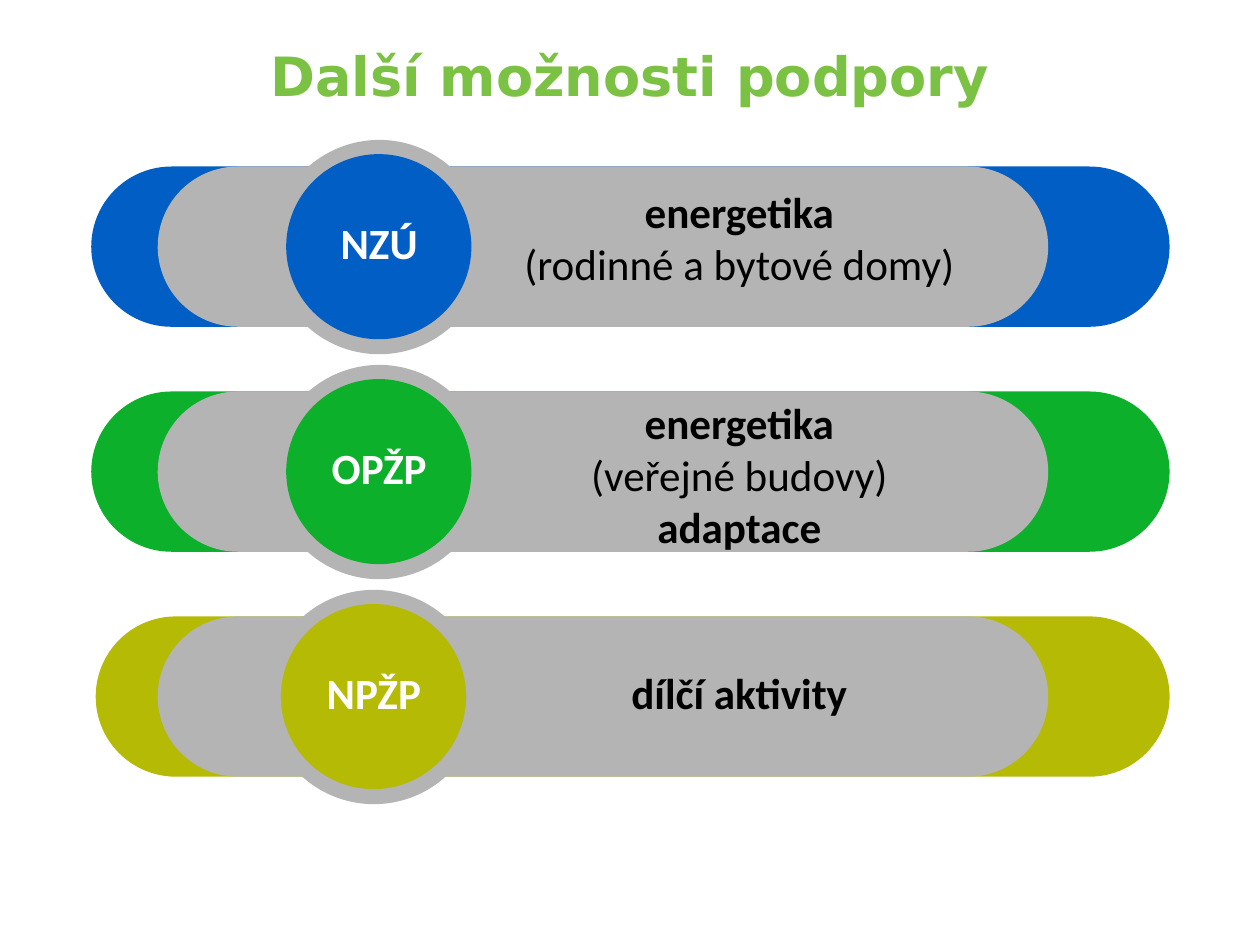
from dataclasses import dataclass

from pptx import Presentation
from pptx import util as u
from pptx.dml.color import RGBColor
from pptx.enum import shapes, text

PX = 9144  # EMU in one px, 100 px to the inch


@dataclass(frozen=True)
class Theme:
    blue: str = "005EC4"
    green: str = "0DB02B"
    olive: str = "B5BA05"
    grey: str = "B4B4B4"
    white: str = "FFFFFF"
    black: str = "000000"
    title: str = "7BC143"
    body_font: str = "Calibri"
    title_font: str = "DejaVu Sans"
    body_size: int = 35
    title_size: int = 44


THEME = Theme()
BAND_LEFT, BAND_RIGHT, BAND_TOP = 103, 1320, 188
BAND_HEIGHT, BAND_PITCH = 181, 254
PANEL_LEFT, PANEL_WIDTH = 178, 1005
RING, DISC = 242, 209
TEXT_LEFT, TEXT_WIDTH, LINE_HEIGHT = 549, 571, 59

# label, colour, shift of the band end, shift of the badge, text offset, lines (text, bold)
PROGRAMMES = [
    ("NZÚ", THEME.blue, 0, 0, 17,
     [("energetika", True), ("(rodinné a bytové domy)", False)]),
    ("OPŽP", THEME.green, 0, 0, 1,
     [("energetika", True), ("(veřejné budovy)", False), ("adaptace", True)]),
    ("NPŽP", THEME.olive, 5, -6, 52,
     [("dílčí aktivity", True)]),
]


def scaled(box):
    return [u.Emu(length * PX) for length in box]


def add_solid(slide, kind, box, colour):
    shape = slide.shapes.add_shape(kind, *scaled(box))
    shape.shadow.inherit = False
    shape.fill.solid()
    shape.fill.fore_color.rgb = RGBColor.from_string(colour)
    shape.line.fill.background()
    return shape


def add_pill(slide, box, colour):
    pill = add_solid(slide, shapes.MSO_SHAPE.ROUNDED_RECTANGLE, box, colour)
    pill.adjustments[0] = 0.5


def add_text(slide, box, lines, colour, name=THEME.body_font, size=THEME.body_size):
    frame = slide.shapes.add_textbox(*scaled(box)).text_frame
    frame.word_wrap = True
    for index, (words, bold) in enumerate(lines):
        para = frame.paragraphs[0] if index == 0 else frame.add_paragraph()
        para.alignment = text.PP_ALIGN.CENTER
        span = para.add_run()
        span.text = words
        for key, value in dict(name=name, size=u.Pt(size), bold=bold).items():
            setattr(span.font, key, value)
        span.font.color.rgb = RGBColor.from_string(colour)


def add_title(slide, box):
    add_text(slide, box, [("Další možnosti podpory", True)],
             THEME.title, THEME.title_font, THEME.title_size)


def add_badge(slide, box, label, colour):
    left, top, size, _ = box
    inset = (size - DISC) // 2
    oval = shapes.MSO_SHAPE.OVAL
    add_solid(slide, oval, box, THEME.grey)
    add_solid(slide, oval, (left + inset, top + inset, DISC, DISC), colour)
    add_text(slide, (left + 43, top + 82, size - 86, 69), [(label, True)], THEME.white)


def add_programme(slide, box, programme):
    left, top, width, height = box
    label, colour, end_shift, badge_shift, text_offset, lines = programme
    # Coloured band with the grey panel on it
    add_pill(slide, (left + end_shift, top, width - end_shift, height), colour)
    add_pill(slide, (left + PANEL_LEFT - BAND_LEFT, top, PANEL_WIDTH, height), THEME.grey)
    # Round badge and description
    add_badge(slide, (left + 204 + badge_shift, top - 30, RING, RING), label, colour)
    text_box = (left + TEXT_LEFT - BAND_LEFT, top + text_offset,
                TEXT_WIDTH, LINE_HEIGHT * len(lines) + 10)
    add_text(slide, text_box, lines, THEME.black)


def main():
    deck = Presentation()
    deck.slide_width, deck.slide_height = scaled((1422, 1067))
    slide = deck.slides.add_slide(deck.slide_layouts[6])
    for row, programme in enumerate(PROGRAMMES):
        box = (BAND_LEFT, BAND_TOP + row * BAND_PITCH, BAND_RIGHT - BAND_LEFT, BAND_HEIGHT)
        add_programme(slide, box, programme)
    add_title(slide, (71, 43, 1280, 178))
    deck.save("out.pptx")


if __name__ == "__main__":
    main()
